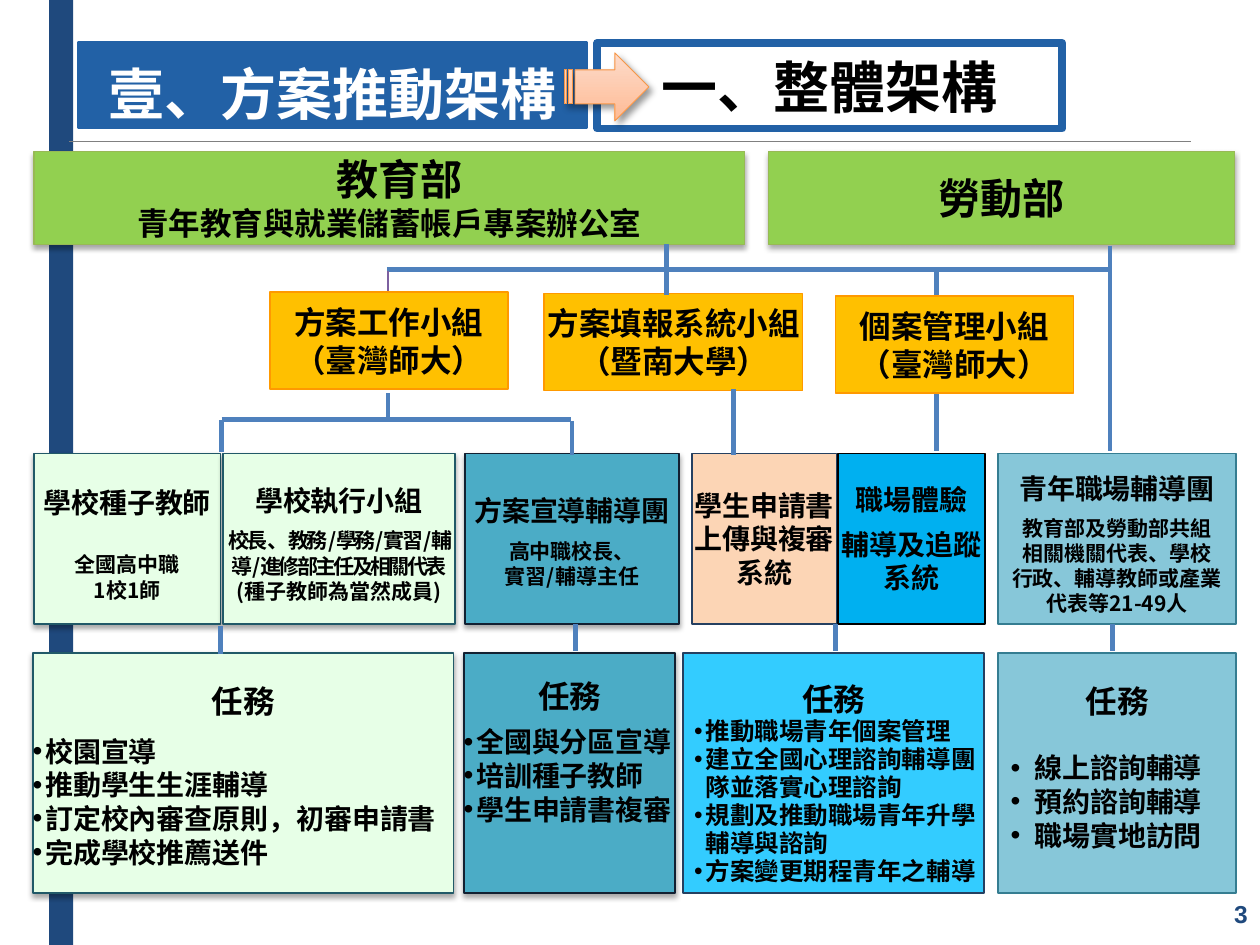
from dataclasses import dataclass

from lxml import etree
from pptx import Presentation
from pptx import util as u
from pptx.dml.color import RGBColor
from pptx.enum import shapes, text
from pptx.oxml import ns


@dataclass(frozen=True)
class Theme:
    font: str = "Noto Sans CJK SC"
    number_font: str = "Arial"
    # Colours
    black: str = "000000"
    white: str = "FFFFFF"
    navy: str = "1F497D"
    blue: str = "2261A6"
    wire: str = "4F81BD"
    thin_wire: str = "7D60A0"
    rule: str = "808080"
    green: tuple = ("92D050", "98B955")
    amber: tuple = ("FFC000", "FF9900")
    mint: tuple = ("E7FFE7", "215968")
    teal: tuple = ("4BACC6", "122031")
    pale_teal: tuple = ("87C7D9", "357D91")
    peach: tuple = ("FCD5B5", "254061")
    azure: tuple = ("00B0F0", "000000")
    sky: tuple = ("33CCFF", "254061")
    arrow: tuple = ("FDDBCA", "FEBB95")
    arrow_line: str = "F79646"
    # Type sizes
    title: int = 32
    ministry: int = 24
    group: int = 18
    team: int = 16
    duty: int = 14
    detail: int = 12


T = Theme()

# Shadows: opacity %, blur pt, distance pt, angle
SOFT = (35, 3.1, 1.8, 90)
ARROW_SHADOW = (40, 4, 3, 45)

# Rows and insets, in inches
TEAM_Y, TEAM_H = 3.6, 1.35
TASK_Y, TASK_H = 5.18, 1.91
EVEN = (0.04, 0.04, 0.04, 0.04)
NONE = (0, 0, 0, 0)
TOP = (0, 0.08, 0, 0)


def para(content, size, **style):
    """A paragraph: content is a string or a list of (text, spacing) runs."""
    runs = [(content, 0)] if isinstance(content, str) else content
    return dict(runs=runs, size=size, **style)


def lines(texts, size, **style):
    return [para(t, size, **style) for t in texts]


def bullets(texts, size=T.team, before=0, **style):
    items = lines(texts, size, bullet=True, **{"indent": (0.1, -0.1), **style})
    items[0]["before"] = before
    return items


def add_run(p, content, size, color, font, spacing=0):
    r = p.add_run()
    r.text = content
    r.font.size, r.font.bold, r.font.name = u.Pt(size), True, font
    r.font.color.rgb = RGBColor.from_string(color)
    rpr = r._r.get_or_add_rPr()
    if spacing:
        rpr.set("spc", str(int(spacing * 100)))
    etree.SubElement(rpr, ns.qn("a:ea")).set("typeface", font)


def write(tf, paras, color=T.black, font=T.font):
    for i, item in enumerate(paras):
        p = tf.paragraphs[0] if i == 0 else tf.add_paragraph()
        bullet = item.get("bullet")
        p.alignment = item.get("align", text.PP_ALIGN.LEFT if bullet else text.PP_ALIGN.CENTER)
        p.space_before = u.Pt(item.get("before", 0))
        p.space_after = u.Pt(item.get("after", 0))
        if "spacing" in item:
            p.line_spacing = item["spacing"]
        ppr = p._p.get_or_add_pPr()
        left, first = item.get("indent", (0, 0))
        ppr.set("marL", str(u.Inches(left)))
        ppr.set("indent", str(u.Inches(first)))
        if bullet:
            etree.SubElement(ppr, ns.qn("a:buFont")).set("typeface", T.number_font)
            etree.SubElement(ppr, ns.qn("a:buChar")).set("char", "•")
        for content, spacing in item["runs"]:
            add_run(p, content, item["size"], color, font, spacing)


def set_shadow(sp, shadow):
    sp.shadow.inherit = False
    if shadow:
        alpha, blur, dist, angle = shadow
        effects = sp._element.spPr.find(ns.qn("a:effectLst"))
        outer = etree.SubElement(effects, ns.qn("a:outerShdw"), blurRad=str(u.Pt(blur)),
                                 dist=str(u.Pt(dist)), dir=str(angle * 60000), rotWithShape="0")
        clr = etree.SubElement(outer, ns.qn("a:srgbClr"), val=T.black)
        etree.SubElement(clr, ns.qn("a:alpha"), val=str(alpha * 1000))


def add_box(s, at, colors, paras=(), inset=NONE, top=False, shadow=None,
            width=1, color=T.black, wrap=True):
    fill, line = colors
    sp = s.shapes.add_shape(shapes.MSO_SHAPE.RECTANGLE, *map(u.Inches, at))
    sp.fill.solid()
    sp.fill.fore_color.rgb = RGBColor.from_string(fill)
    if line:
        sp.line.color.rgb = RGBColor.from_string(line)
        sp.line.width = u.Pt(width)
    else:
        sp.line.fill.background()
    set_shadow(sp, shadow)
    tf = sp.text_frame
    tf.word_wrap = wrap
    tf.margin_left, tf.margin_top, tf.margin_right, tf.margin_bottom = map(u.Inches, inset)
    tf.vertical_anchor = text.MSO_ANCHOR.TOP if top else text.MSO_ANCHOR.MIDDLE
    write(tf, paras, color)


def add_wire(s, x1, y1, x2, y2, color=T.wire, width=2.75):
    cx = s.shapes.add_connector(shapes.MSO_CONNECTOR.STRAIGHT, *map(u.Inches, (x1, y1, x2, y2)))
    cx.line.color.rgb = RGBColor.from_string(color)
    cx.line.width = u.Pt(width)
    etree.SubElement(cx._element.spPr, ns.qn("a:effectLst"))


def add_header(s):
    add_box(s, (4.74, 0.34, 3.69, 0.68), (T.white, T.blue), [para("一、整體架構", T.title)],
            EVEN, width=4.5, wrap=False)
    add_box(s, (0.62, 0.34, 4.04, 0.67), (T.blue, T.blue),
            [para("壹、方案推動架構", T.title, spacing=1.25)],
            EVEN, width=1.5, color=T.white, wrap=False)
    sp = s.shapes.add_shape(shapes.MSO_SHAPE.STRIPED_RIGHT_ARROW,
                            *map(u.Inches, (4.48, 0.42, 0.67, 0.54)))
    sp.fill.gradient()
    sp.fill.gradient_angle = 270
    for stop, color in zip(sp.fill.gradient_stops, T.arrow):
        stop.color.rgb = RGBColor.from_string(color)
    sp.line.color.rgb = RGBColor.from_string(T.arrow_line)
    sp.line.width = u.Pt(0.5)
    set_shadow(sp, ARROW_SHADOW)


def add_ministries(s):
    education = [para("教育部", T.ministry, indent=(0.16, 0)),
                 para("青年教育與就業儲蓄帳戶專案辦公室", T.group)]
    for x, w, paras in ((0.27, 5.64, education), (6.1, 3.7, [para("勞動部", T.ministry)])):
        add_box(s, (x, 1.2, w, 0.74), T.green, paras, EVEN, shadow=SOFT, width=0.75)


def add_groups(s):
    for x, y, w, name, school in ((2.14, 2.32, 1.89, "方案工作小組", "（臺灣師大）"),
                                  (4.32, 2.33, 2.05, "方案填報系統小組", "（暨南大學）"),
                                  (6.63, 2.35, 1.89, "個案管理小組", "（臺灣師大）")):
        add_box(s, (x, y, w, 0.77), T.amber, lines((name, school), T.group), (0, 0.04, 0, 0.04))


def add_teams(s):
    members = [("校長", -1.5), ("、", -3), ("教務/學務/實習/輔導/進修部主任及相關代表", -1.5)]
    teams = (
        (0.27, 1.48, T.mint, TOP, SOFT,
         [para("學校種子教師", T.team, after=19), *lines(("全國高中職", "1校1師"), T.detail)]),
        (1.77, 1.84, T.mint, TOP, SOFT,
         [para("學校執行小組", T.team, after=6),
          *lines((members, "(種子教師為當然成員)"), T.detail)]),
        (3.69, 1.7, T.teal, (0, 0.04, 0, 0), SOFT,
         [para("方案宣導輔導團", T.team, after=6),
          *lines(("高中職校長、", "實習/輔導主任"), T.detail)]),
        (5.49, 1.15, T.peach, NONE, None, [para("學生申請書上傳與複審系統", T.team, after=6)]),
        (6.65, 1.17, T.azure, NONE, None,
         lines(("職場體驗", "輔導及追蹤系統"), T.team, after=6)),
        (7.92, 1.89, T.pale_teal, TOP, None,
         [para("青年職場輔導團", T.team, after=6),
          *lines(("教育部及勞動部共組", "相關機關代表、學校",
                  "行政、輔導教師或產業", "代表等21-49人"), T.detail)]),
    )
    for x, w, colors, inset, shadow, paras in teams:
        add_box(s, (x, TEAM_Y, w, TEAM_H), colors, paras, inset, shadow=shadow)


def add_tasks(s):
    tasks = (
        (0.26, 3.34, T.mint, TOP, True, SOFT,
         bullets(("校園宣導", "推動學生生涯輔導", "訂定校內審查原則，初審申請書",
                  "完成學校推薦送件"), before=8.5)),
        (3.68, 1.68, T.teal, (0, 0.04, 0, 0), True, SOFT,
         bullets(("全國與分區宣導", "培訓種子教師", "學生申請書複審"), before=6)),
        (5.42, 2.39, T.sky, NONE, False, None,
         bullets(("推動職場青年個案管理", "建立全國心理諮詢輔導團隊並落實心理諮詢",
                  "規劃及推動職場青年升學輔導與諮詢", "方案變更期程青年之輔導"),
                 T.duty, indent=(0.18, -0.09), spacing=u.Pt(16))),
        (7.92, 1.89, T.pale_teal, TOP, True, None,
         bullets(("線上諮詢輔導", "預約諮詢輔導", "職場實地訪問"), before=18,
                 indent=(0.29, -0.19))),
    )
    for x, w, colors, inset, top, shadow, items in tasks:
        heading = para("任務", T.group, spacing=1.5)
        add_box(s, (x, TASK_Y, w, TASK_H), colors, [heading, *items], inset, top, shadow)


def add_wires(s):
    # Horizontal buses
    add_wire(s, 3.07, 2.14, 8.81, 2.14)
    add_wire(s, 1.76, 3.33, 4.53, 3.33)
    # Vertical drops: x, top, bottom
    for x, y1, y2 in ((5.29, 1.94, 2.34), (8.81, 1.95, 3.58), (3.08, 3.12, 3.33),
                      (1.76, 3.33, 3.59), (4.54, 3.34, 3.61), (5.82, 3.09, 3.61),
                      (1.75, 4.97, 5.19), (4.57, 4.95, 5.17), (6.63, 4.95, 5.17),
                      (8.83, 4.95, 5.17)):
        add_wire(s, x, y1, x, y2)
    for y1, y2 in ((2.14, 2.34), (3.13, 3.58)):
        add_wire(s, 7.43, y1, 7.43, y2, width=3)
    add_wire(s, 3.08, 2.15, 3.08, 2.31, T.thin_wire, 0.75)


def add_page_number(s):
    tf = s.shapes.add_textbox(*map(u.Inches, (8.69, 7.03, 1.31, 0.44))).text_frame
    tf.word_wrap = True
    tf.vertical_anchor = text.MSO_ANCHOR.MIDDLE
    write(tf, [para("3", T.duty, align=text.PP_ALIGN.RIGHT)], T.navy, T.number_font)


def main():
    prs = Presentation()
    prs.slide_width, prs.slide_height = u.Inches(10), u.Inches(7.5)
    s = prs.slides.add_slide(prs.slide_layouts[6])
    # Side band and header rule
    add_box(s, (0.39, 0, 0.19, 7.5), (T.navy, None))
    add_wire(s, 0.55, 1.12, 9.45, 1.12, T.rule, 0.25)
    # Organisation chart, top to bottom
    add_ministries(s)
    add_groups(s)
    add_teams(s)
    add_tasks(s)
    add_wires(s)
    add_header(s)
    add_page_number(s)
    prs.save("out.pptx")


if __name__ == "__main__":
    main()
